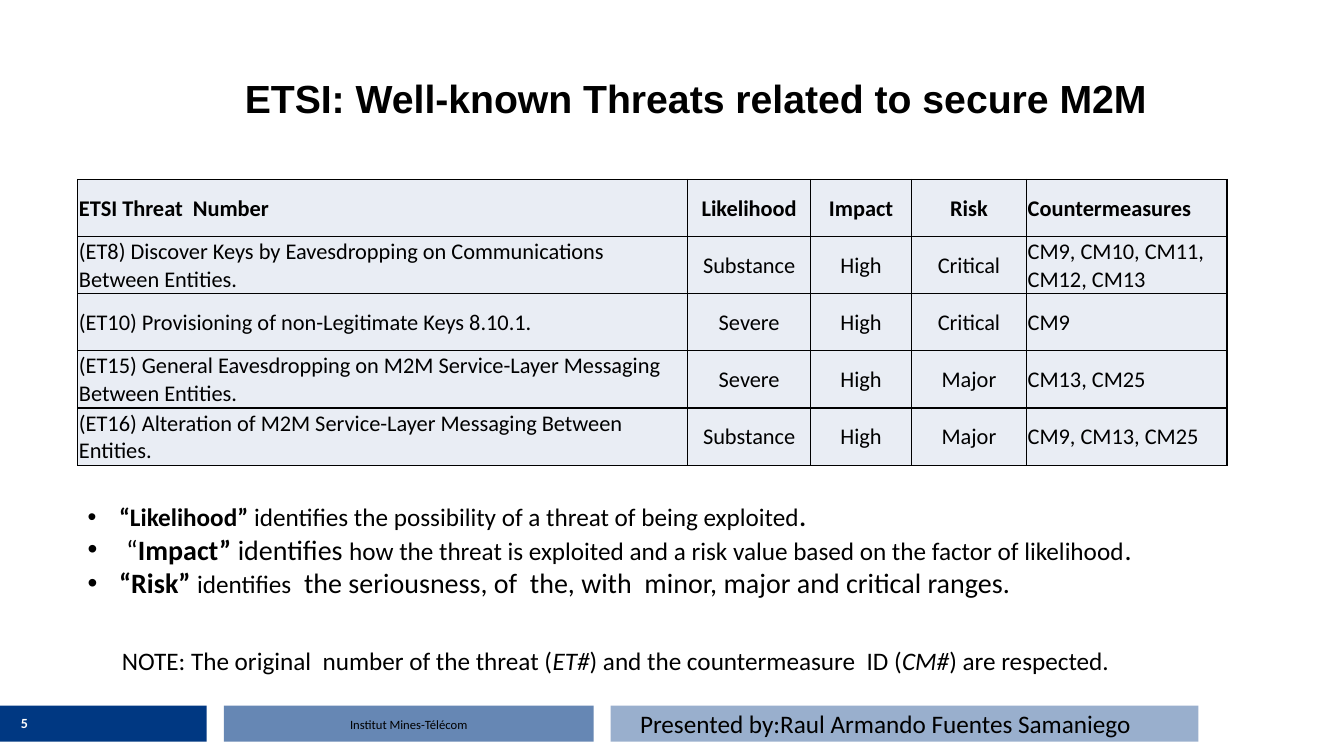
"""Builds the slide on well-known ETSI threats to secure M2M."""
from lxml import etree
from pptx import Presentation, util as u
from pptx.dml.color import RGBColor
from pptx.enum import shapes, text
from pptx.oxml.ns import qn

COLORS = {"navy": "003882", "ink": "000000", "white": "FFFFFF", "cell": "E9EDF4"}
LEFT, CENTER = text.PP_ALIGN.LEFT, text.PP_ALIGN.CENTER
TOP, MIDDLE, BOTTOM = text.MSO_ANCHOR.TOP, text.MSO_ANCHOR.MIDDLE, text.MSO_ANCHOR.BOTTOM


def style(run, size, look="", color="ink", face="Calibri"):
    run.font.name = face
    run.font.size = u.Pt(size)
    run.font.bold = "b" in look
    run.font.italic = "i" in look
    run.font.color.rgb = RGBColor.from_string(COLORS[color])


def add_box(left, top, width, height, anchor=TOP):
    frame = slide.shapes.add_textbox(u.Cm(left), u.Cm(top), u.Cm(width), u.Cm(height)).text_frame
    frame.word_wrap = True
    frame.vertical_anchor = anchor
    return frame


prs = Presentation()
prs.slide_width, prs.slide_height = u.Cm(33.87), u.Cm(19.05)
slide = prs.slides.add_slide(prs.slide_layouts[6])

for left, width, opacity in [(15.39, 14.81, 40), (0, 5.21, 100), (5.64, 9.32, 60)]:
    bar = slide.shapes.add_shape(shapes.MSO_SHAPE.RECTANGLE,
                                 u.Cm(left), u.Cm(17.78), u.Cm(width), u.Cm(0.91))
    bar.shadow.inherit = False
    bar.line.fill.background()
    bar.fill.solid()
    bar.fill.fore_color.rgb = RGBColor.from_string(COLORS["navy"])
    if opacity < 100:
        tint = bar._element.spPr.find(qn("a:solidFill"))[0]
        etree.SubElement(tint, qn("a:alpha"), val=str(opacity * 1000))

labels = [
    ("Institut Mines-Télécom", (5.64, 17.93, 9.32, 0.64), MIDDLE, CENTER, (9,)),
    ("ETSI: Well-known Threats related to secure M2M", (5.92, 0.64, 26.24, 2.54),
     BOTTOM, LEFT, (28, "b", "ink", "Arial")),
    ("5", (0.28, 17.83, 2.39, 0.79), MIDDLE, LEFT, (10, "b", "white")),
    ("Presented by:Raul Armando Fuentes Samaniego", (15.88, 17.73, 14.1, 1.02),
     TOP, LEFT, (18,)),
]
for wording, place, anchor, align, look in labels:
    label = add_box(*place, anchor)
    label.text = wording
    label.paragraphs[0].alignment = align
    style(label.paragraphs[0].runs[0], *look)

threats = [
    ("ETSI Threat  Number", "Likelihood", "Impact", "Risk", "Countermeasures"),
    ("(ET8) Discover Keys by Eavesdropping on Communications Between Entities.",
     "Substance", "High", "Critical", "CM9, CM10, CM11, CM12, CM13"),
    ("(ET10) Provisioning of non-Legitimate Keys 8.10.1.",
     "Severe", "High", "Critical", "CM9"),
    ("(ET15) General Eavesdropping on M2M Service-Layer Messaging Between Entities.",
     "Severe", "High", "Major", "CM13, CM25"),
    ("(ET16) Alteration of M2M Service-Layer Messaging Between Entities.",
     "Substance", "High", "Major", "CM9, CM13, CM25"),
]
widths = [15.37, 3.1, 2.54, 2.9, 5.05]
threat_table = slide.shapes.add_table(len(threats), len(widths), u.Cm(1.96), u.Cm(4.52),
                                      u.Cm(sum(widths)), u.Cm(1.44 * len(threats))).table
for column, width in zip(threat_table.columns, widths):
    column.width = u.Cm(width)
for r, threat in enumerate(threats):
    threat_table.rows[r].height = u.Cm(1.44)
    for c, wording in enumerate(threat):
        cell = threat_table.cell(r, c)
        cell.text = wording
        cell.vertical_anchor = MIDDLE
        cell.margin_left = cell.margin_right = cell.margin_top = u.Cm(0.03)
        cell.margin_bottom = 0
        entry = cell.text_frame.paragraphs[0]
        entry.alignment = CENTER if 0 < c < 4 else LEFT
        style(entry.runs[0], 16, "b" if r == 0 else "")
        props = cell._tc.get_or_add_tcPr()
        for side in ("a:lnL", "a:lnR", "a:lnT", "a:lnB"):
            border = etree.SubElement(props, qn(side), w=str(u.Pt(1)))
            paint = etree.SubElement(border, qn("a:solidFill"))
            etree.SubElement(paint, qn("a:srgbClr"), val=COLORS["ink"])
        cell.fill.solid()
        cell.fill.fore_color.rgb = RGBColor.from_string(COLORS["cell"])

definitions = [
    (0.79, [("“Likelihood” ", 18, "b"),
            ("identifies the possibility of a threat of being exploited", 18), (".", 18, "b")]),
    (0.97, [("“", 20), ("Impact”", 20, "b"), (" identifies ", 20),
            ("how the threat is exploited and a risk value based on the factor of likelihood", 18),
            (".", 20)]),
    (0.79, [("“Risk” ", 20, "b"), ("identifies", 18), (" ", 20, "b"),
            (" the seriousness, of  the, with  minor, major and critical ranges.", 20)]),
]
note = [("NOTE: The original  number of the threat (", 18), ("ET#", 18, "i"),
        (") and the countermeasure  ID (", 18), ("CM#", 18, "i"), (") are respected.", 18)]
for place, passages in [((1.96, 12.52, 29.87, 2.74), definitions),
                        ((2.82, 16.13, 26.49, 1.02), [(0, note)])]:
    body = add_box(*place)
    for i, (indent, pieces) in enumerate(passages):
        passage = body.add_paragraph() if i else body.paragraphs[0]
        if indent:
            props = passage._p.get_or_add_pPr()
            props.set("marL", str(u.Cm(indent)))
            props.set("indent", str(-u.Cm(indent)))
            etree.SubElement(props, qn("a:buFont"), typeface="Arial")
            etree.SubElement(props, qn("a:buChar"), char="•")
        for wording, *look in pieces:
            run = passage.add_run()
            run.text = wording
            style(run, *look)

prs.save("out.pptx")
